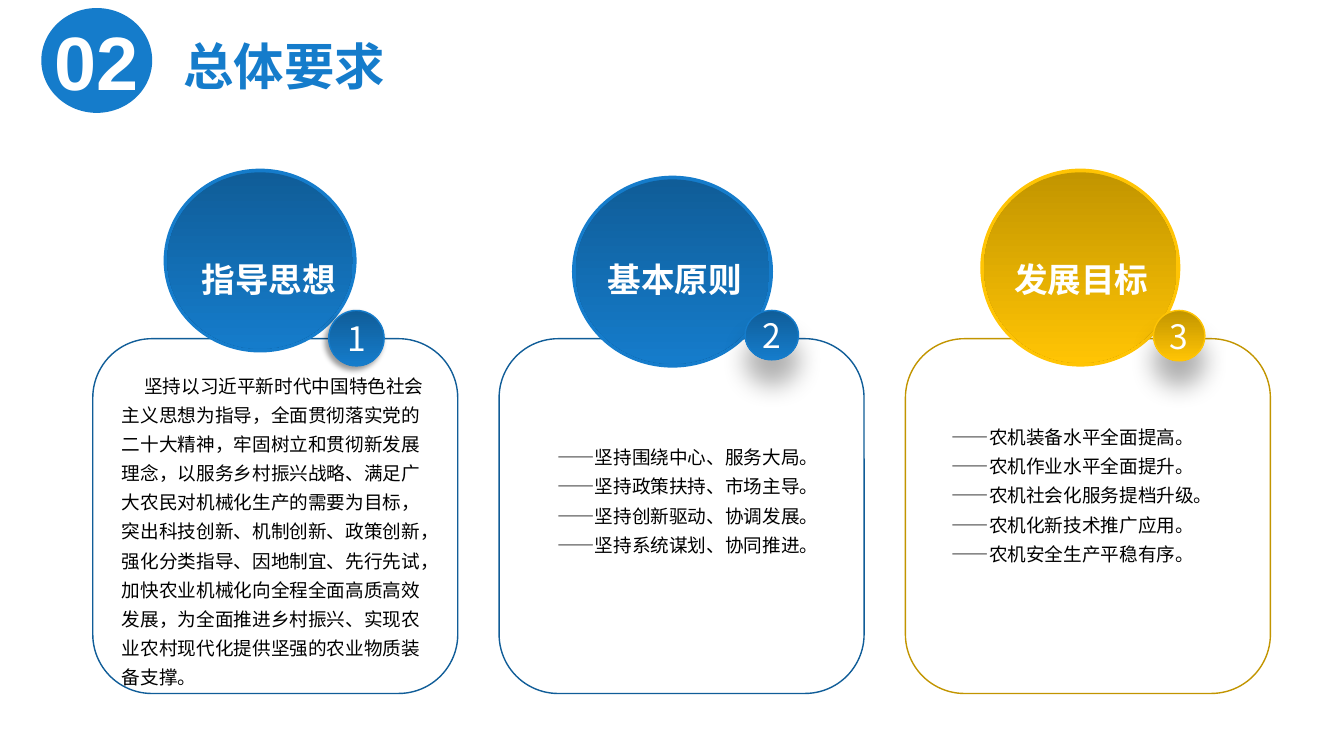
from dataclasses import dataclass

from lxml import etree
from pptx import Presentation
from pptx.dml.color import RGBColor
from pptx.enum import shapes, text
from pptx.oxml import ns
from pptx.util import Inches, Pt

BLUE, DEEP_BLUE = RGBColor(0x15, 0x7C, 0xCB), RGBColor(0x10, 0x5D, 0x98)
GOLD, DEEP_GOLD = RGBColor(0xFF, 0xC4, 0x04), RGBColor(0xC2, 0x95, 0x00)
WHITE, BLACK = RGBColor(0xFF, 0xFF, 0xFF), RGBColor(0, 0, 0)
CJK, LATIN = "Noto Sans CJK SC", "Arial"
SHAPE = shapes.MSO_SHAPE
LEFT, CENTER = text.PP_ALIGN.LEFT, text.PP_ALIGN.CENTER
TOP, MIDDLE = text.MSO_ANCHOR.TOP, text.MSO_ANCHOR.MIDDLE

# Three equal columns; horizontal offsets count from a column's left edge.
FIRST_COLUMN, COLUMN_PITCH = 0.92, 4.03
CARD_TOP, CARD_WIDTH, CARD_HEIGHT = 3.36, 3.62, 3.52
HEADING_TOP, BADGE_TOP = 2.52, 3.08
RING = 0.03


@dataclass
class Topic:
    heading: str
    lines: list
    bright: RGBColor
    deep: RGBColor
    disc: tuple
    badge: tuple
    body: tuple
    shadow: tuple  # opacity %, blur, distance, direction
    indent: float
    hang: bool


TOPICS = [
    Topic("指导思想",
          ["坚持以习近平新时代中国特色社会主义思想为指导，全面贯彻落实党的二十大精神，"
           "牢固树立和贯彻新发展理念，以服务乡村振兴战略、满足广大农民对机械化生产的需要为目标，"
           "突出科技创新、机制创新、政策创新，强化分类指导、因地制宜、先行先试，"
           "加快农业机械化向全程全面高质高效发展，为全面推进乡村振兴、"
           "实现农业农村现代化提供坚强的农业物质装备支撑。"],
          BLUE, DEEP_BLUE, (0.71, 1.68, 1.9, 1.81), (2.34, 0.55, 0.55),
          (0.29, 3.65, 3.07, 2.92), (40, 4, 3, 135), 0.22, False),
    Topic("基本原则",
          ["——坚持围绕中心、服务大局。", "——坚持政策扶持、市场主导。",
           "——坚持创新驱动、协调发展。", "——坚持系统谋划、协同推进。"],
          BLUE, DEEP_BLUE, (0.73, 1.75, 1.98, 1.89), (2.44, 0.53, 0.49),
          (0.36, 4.36, 2.88, 1.68), (30, 18, 18, 90), 0.22, True),
    Topic("发展目标",
          ["——农机装备水平全面提高。", "——农机作业水平全面提升。",
           "——农机社会化服务提档升级。", "——农机化新技术推广应用。",
           "——农机安全生产平稳有序。"],
          GOLD, DEEP_GOLD, (0.75, 1.68, 1.97, 1.95), (2.46, 0.51, 0.5),
          (0.38, 4.16, 2.88, 1.47), (31, 18, 18, 90), 0.08, True),
]


def inches(*lengths):
    return [Inches(length) for length in lengths]


def write(shape, lines, size, color, bold=False, font=CJK, align=LEFT, anchor=TOP,
          inset=None, wrap=True):
    frame = shape.text_frame
    frame.text = "\n".join(lines)
    frame.word_wrap = wrap
    frame.auto_size = text.MSO_AUTO_SIZE.NONE
    frame.vertical_anchor = anchor
    if inset is not None:
        frame.margin_left = frame.margin_right = Inches(inset)
        frame.margin_top = frame.margin_bottom = Inches(inset)
    for paragraph in frame.paragraphs:
        paragraph.alignment = align
        for run in paragraph.runs:
            run.font.name, run.font.size, run.font.bold = font, Pt(size), bold
            run.font.color.rgb = color
            east_asian = etree.SubElement(run.font._element, ns.qn("a:ea"))
            east_asian.set("typeface", font)
    return frame.paragraphs


def add_outline(slide, kind, box, fill=None, line=None):
    shape = slide.shapes.add_shape(kind, *inches(*box))
    shape.shadow.inherit = False
    if fill is None:
        shape.fill.background()
    else:
        shape.fill.solid()
        shape.fill.fore_color.rgb = fill
    if line is None:
        shape.line.fill.background()
    else:
        shape.line.color.rgb = line
        shape.line.width = Pt(1)
    return shape


def shade(shape, topic):
    """Fill with the topic's gradient, deep at the top."""
    shape.fill.gradient()
    shape.fill.gradient_angle = 270
    for stop, color in zip(shape.fill.gradient_stops, (topic.deep, topic.bright)):
        stop.color.rgb = color


def cast_shadow(shape, opacity, blur, distance, direction):
    effects = shape._element.spPr.find(ns.qn("a:effectLst"))
    shadow = etree.SubElement(effects, ns.qn("a:outerShdw"), blurRad=str(Pt(blur)),
                              dist=str(Pt(distance)), dir=str(direction * 60000),
                              algn="ctr", rotWithShape="0")
    color = etree.SubElement(shadow, ns.qn("a:srgbClr"), val=str(BLACK))
    etree.SubElement(color, ns.qn("a:alpha"), val=str(opacity * 1000))


def add_disc(slide, left, topic):
    dx, top, width, height = topic.disc
    ring = add_outline(slide, SHAPE.DONUT, (left + dx, top, width, height),
                       topic.bright, topic.bright)
    ring.adjustments[0] = 0.05
    core = add_outline(slide, SHAPE.OVAL, (left + dx + RING, top + RING,
                                           width - 2 * RING, height - 2 * RING))
    shade(core, topic)


def add_badge(slide, left, number, topic):
    dx, width, height = topic.badge
    badge = add_outline(slide, SHAPE.OVAL, (left + dx, BADGE_TOP, width, height),
                        line=topic.bright)
    shade(badge, topic)
    cast_shadow(badge, *topic.shadow)
    write(badge, [str(number)], 24, WHITE, align=CENTER, anchor=MIDDLE, inset=0, wrap=False)


def add_body(slide, left, topic):
    dx, *rest = topic.body
    body = slide.shapes.add_textbox(*inches(left + dx, *rest))
    for paragraph in write(body, topic.lines, 13.3, BLACK, inset=0):
        paragraph.line_spacing = Pt(20.8)
        side = "marL" if topic.hang else "indent"
        paragraph._p.get_or_add_pPr().set(side, str(Inches(topic.indent)))


def add_topic(slide, index, topic):
    left = FIRST_COLUMN + index * COLUMN_PITCH
    add_outline(slide, SHAPE.ROUNDED_RECTANGLE,
                (left, CARD_TOP, CARD_WIDTH, CARD_HEIGHT), line=topic.deep)
    add_disc(slide, left, topic)
    add_badge(slide, left, index + 1, topic)
    heading = slide.shapes.add_textbox(*inches(left + 0.98, HEADING_TOP, 1.64, 0.5))
    write(heading, [topic.heading], 24, WHITE, bold=True)
    add_body(slide, left, topic)


def add_header(slide):
    section = add_outline(slide, SHAPE.OVAL, (0.41, 0.08, 1.1, 1.04), BLUE)
    write(section, ["02"], 54, WHITE, True, LATIN, CENTER, MIDDLE, 0, wrap=False)
    title = slide.shapes.title
    title.left, title.top, title.width, title.height = inches(1.72, 0.29, 3.88, 0.71)
    write(title, ["总体要求"], 36, BLUE, bold=True, anchor=MIDDLE)


def main():
    deck = Presentation()
    deck.slide_width, deck.slide_height = inches(13.33, 7.5)
    slide = deck.slides.add_slide(deck.slide_layouts[5])
    add_header(slide)
    for index, topic in enumerate(TOPICS):
        add_topic(slide, index, topic)
    deck.save("out.pptx")


if __name__ == "__main__":
    main()
